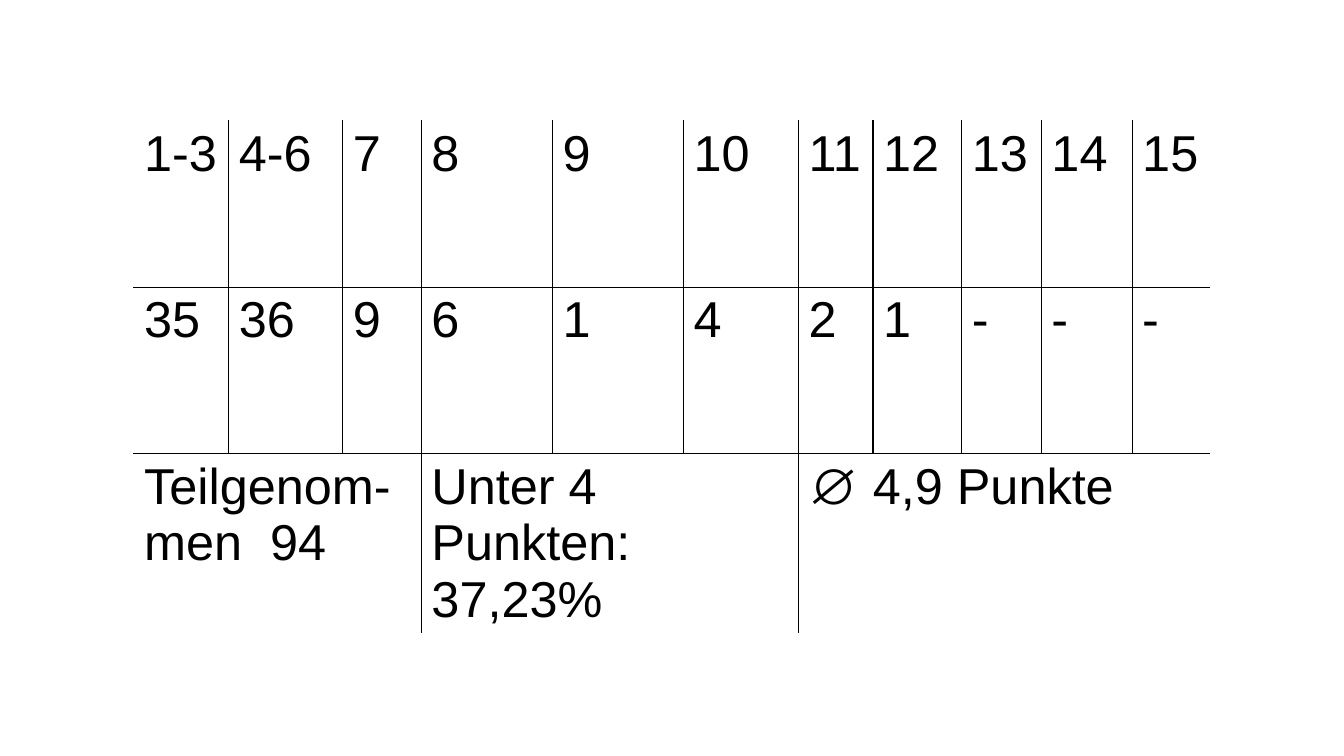
"""Build a slide with a table of exam results by points."""
from pptx import Presentation
from pptx.dml.color import RGBColor
from pptx.oxml.ns import qn
from pptx.util import Inches, Pt
from lxml import etree

THEME = {
    "font": "Arial",
    "size": Pt(36),
    "ink": RGBColor(0, 0, 0),
    "paper": RGBColor(255, 255, 255),
    "border": Pt(1),
}
BLANK_LAYOUT = 6
COLUMN_WIDTHS = [0.94, 1.13, 0.78, 1.3, 1.3, 1.14, 0.74, 0.88, 0.79, 0.9, 0.77]
ROW_HEIGHTS = [1.65, 1.65, 1.79]
POINTS = ["1-3", "4-6", "7", "8", "9", "10", "11", "12", "13", "14", "15"]
COUNTS = ["35", "36", "9", "6", "1", "4", "2", "1", "-", "-", "-"]
SUMMARIES = [
    (0, 2, "Teilgenom-men  94"),
    (3, 5, "Unter 4 Punkten:\n37,23%"),
    (6, 10, "∅ 4,9 Punkte"),
]


def write_cell(cell, text):
    """Put formatted text into a cell."""
    cell.text = text
    for para in cell.text_frame.paragraphs:
        for span in para.runs:
            formats = {"name": THEME["font"], "size": THEME["size"]}
            for name, value in formats.items():
                setattr(span.font, name, value)
            span.font.color.rgb = THEME["ink"]


def style_cell(cell, outer_sides):
    """Fill a cell and draw its borders, paper-coloured on outer sides."""
    properties = cell._tc.get_or_add_tcPr()
    for side in ("L", "R", "T", "B"):
        color = THEME["paper"] if outer_sides[side] else THEME["ink"]
        line = etree.SubElement(properties, qn(f"a:ln{side}"), w=str(THEME["border"]))
        fill = etree.SubElement(line, qn("a:solidFill"))
        etree.SubElement(fill, qn("a:srgbClr"), val=str(color))
    cell.fill.solid()
    cell.fill.fore_color.rgb = THEME["paper"]


deck = Presentation()
deck.slide_width = Inches(13.33)
deck.slide_height = Inches(7.5)
page = deck.slides.add_slide(deck.slide_layouts[BLANK_LAYOUT])

last_row = len(ROW_HEIGHTS) - 1
last_column = len(COLUMN_WIDTHS) - 1
results = page.shapes.add_table(
    len(ROW_HEIGHTS), len(COLUMN_WIDTHS),
    Inches(1.33), Inches(1.2), Inches(sum(COLUMN_WIDTHS)), Inches(sum(ROW_HEIGHTS)),
).table
results.first_row = False
results.horz_banding = False
for column, width in zip(results.columns, COLUMN_WIDTHS):
    column.width = Inches(width)
for row, height in zip(results.rows, ROW_HEIGHTS):
    row.height = Inches(height)

for row_index, texts in enumerate([POINTS, COUNTS]):
    for column_index, text in enumerate(texts):
        write_cell(results.cell(row_index, column_index), text)
for first, last, text in SUMMARIES:
    results.cell(last_row, first).merge(results.cell(last_row, last))
    write_cell(results.cell(last_row, first), text)

span_ends = {first: last for first, last, text in SUMMARIES}
for row_index in range(last_row + 1):
    for column_index in range(last_column + 1):
        end = span_ends.get(column_index, column_index) if row_index == last_row else column_index
        style_cell(results.cell(row_index, column_index), {
            "L": column_index == 0,
            "R": end == last_column,
            "T": row_index == 0,
            "B": row_index == last_row,
        })

deck.save("out.pptx")
